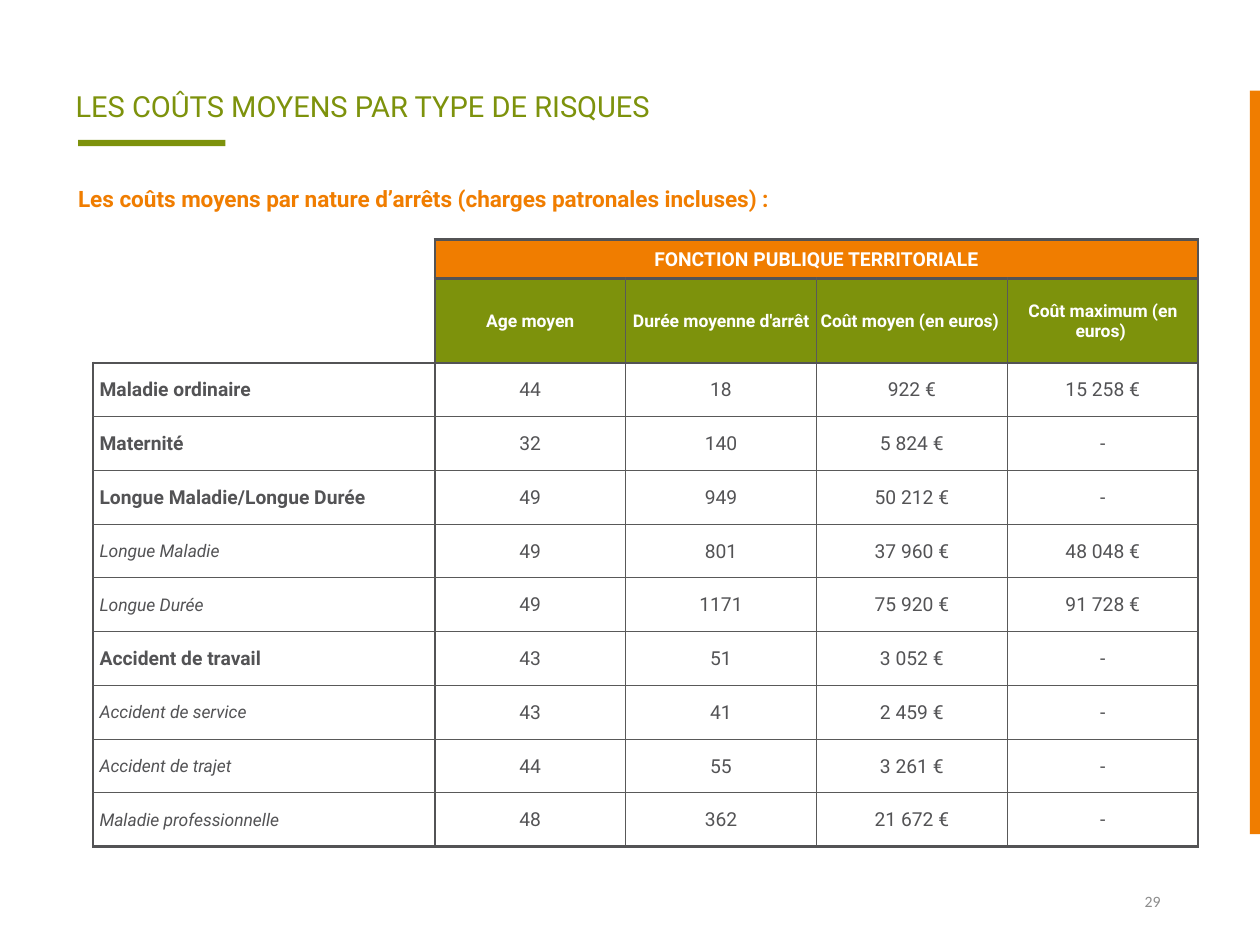
from lxml import etree
from pptx import Presentation
from pptx.dml.color import RGBColor
from pptx.enum.shapes import MSO_SHAPE
from pptx.enum.text import MSO_ANCHOR, PP_ALIGN
from pptx.oxml.ns import qn
from pptx.util import Inches, Pt

GREEN = RGBColor(0x7D, 0x92, 0x0C)
ORANGE = RGBColor(0xF0, 0x7D, 0x00)
DARK = RGBColor(0x53, 0x53, 0x55)
GRID = RGBColor(0x59, 0x59, 0x59)
GREY = RGBColor(0x8C, 0x8C, 0x8C)
WHITE = RGBColor(0xFF, 0xFF, 0xFF)
LEFT, CENTER, RIGHT = PP_ALIGN.LEFT, PP_ALIGN.CENTER, PP_ALIGN.RIGHT
MIDDLE, TOP = MSO_ANCHOR.MIDDLE, MSO_ANCHOR.TOP
RECTANGLE = MSO_SHAPE.RECTANGLE
TITLE_ONLY = 5
FONT = "Roboto"

BANNER = "FONCTION PUBLIQUE TERRITORIALE"
HEADINGS = ["Age moyen", "Durée moyenne d'arrêt", "Coût moyen (en euros) ",
            "Coût maximum (en euros) "]
# Label, whether it is a main category, then the four figures
RISKS = [
    ("Maladie ordinaire", True, "44", "18", "922 €", "15 258 €"),
    ("Maternité", True, "32", "140", "5 824 €", "-"),
    ("Longue Maladie/Longue Durée", True, "49", "949", "50 212 €", "-"),
    ("Longue Maladie", False, "49", "801", "37 960 €", "48 048 €"),
    ("Longue Durée", False, "49", "1171", "75 920 €", "91 728 €"),
    ("Accident de travail", True, "43", "51", "3 052 €", "-"),
    ("Accident de service", False, "43", "41", "2 459 €", "-"),
    ("Accident de trajet", False, "44", "55", "3 261 €", "-"),
    ("Maladie professionnelle", False, "48", "362", "21 672 €", "-"),
]
HEADER_ROWS = 2
ROW_COUNT = HEADER_ROWS + len(RISKS)
COLUMN_COUNT = 1 + len(HEADINGS)


def write(frame, text, size, color, align=LEFT, anchor=MIDDLE, bold=False,
          italic=False, font=FONT):
    frame.word_wrap = True
    frame.vertical_anchor = anchor
    para = frame.paragraphs[0]
    para.alignment = align
    span = para.add_run()
    span.text = text
    span.font.size, span.font.name = Pt(size), font
    span.font.bold, span.font.italic = bold, italic
    span.font.color.rgb = color


def place(shape, box):
    shape.left, shape.top, shape.width, shape.height = map(Inches, box)


def add_bar(page, box, color):
    bar = page.shapes.add_shape(RECTANGLE, *map(Inches, box))
    bar.shadow.inherit = False
    bar.fill.solid()
    bar.fill.fore_color.rgb = color
    bar.line.fill.background()


def add_heading(page, box):
    """Title, its green underline and the orange subtitle."""
    left, top, width, height = box
    title = page.shapes.title
    place(title, (left, top, width, height))
    write(title.text_frame, "LES COÛTS MOYENS PAR TYPE DE RISQUES", 16.6, GREEN)
    inner = left + 0.12
    add_bar(page, (inner, top + 0.46, 1.17, 0.05), GREEN)

    subtitle = page.shapes.add_textbox(*map(Inches, (inner, top + 0.82, 7.14, 0.26)))
    frame = subtitle.text_frame
    frame.margin_left = frame.margin_right = frame.margin_top = frame.margin_bottom = 0
    write(frame, "Les coûts moyens par nature d’arrêts (charges patronales incluses) :",
          12.9, ORANGE, anchor=TOP, bold=True)


def add_edge(cell, side, weight, color):
    """Draw one cell border; a weight of 0 hides it."""
    properties = cell._tc.get_or_add_tcPr()
    edge = etree.SubElement(properties, qn("a:ln" + side), w=str(Pt(weight)))
    if weight:
        fill = etree.SubElement(edge, qn("a:solidFill"))
        etree.SubElement(fill, qn("a:srgbClr"), val=str(color))
    else:
        etree.SubElement(edge, qn("a:noFill"))


def draw_edges(cell, row, column):
    """Thick lines frame the label column, the headers and the figures."""
    corner = row < HEADER_ROWS and column == 0
    edges = [
        ("L", column in (0, 1) or row == 0, corner),
        ("R", column in (0, COLUMN_COUNT - 1) or row == 0, False),
        ("T", row <= HEADER_ROWS, corner),
        ("B", row < HEADER_ROWS or row == ROW_COUNT - 1, corner and row == 0),
    ]
    for side, thick, hidden in edges:
        weight = 0 if hidden else 1.5 if thick else 0.5
        add_edge(cell, side, weight, DARK if thick else GRID)


def fill_cell(cell, row, column):
    """Write the text of a cell and colour it by its role."""
    fill, style = None, dict(size=11, color=DARK, align=CENTER)
    if row < HEADER_ROWS:
        names = [BANNER, "", "", ""] if row == 0 else HEADINGS
        text = "" if column == 0 else names[column - 1]
        style.update(size=11 - row, color=WHITE, bold=True)
        if column:
            fill = (ORANGE, GREEN)[row]
    else:
        label, main, *figures = RISKS[row - HEADER_ROWS]
        text = figures[column - 1] if column else label
        if column == 0:
            style.update(size=11 if main else 10, align=LEFT, bold=main, italic=not main)
    cell.margin_left = Inches(0.01 if column or row < HEADER_ROWS else 0.05)
    cell.margin_right = cell.margin_top = Inches(0.01)
    cell.margin_bottom = 0
    cell.vertical_anchor = MIDDLE
    write(cell.text_frame, text, **style)
    if fill is None:
        cell.fill.background()
    else:
        cell.fill.solid()
        cell.fill.fore_color.rgb = fill


def add_cost_table(page, box):
    width, height = box[2:]
    table = page.shapes.add_table(ROW_COUNT, COLUMN_COUNT, *map(Inches, box)).table
    table.first_row = table.horz_banding = False

    label_width, header_heights = 2.71, [0.3, 0.67]
    figure_width = (width - label_width) / len(HEADINGS)
    body_height = (height - sum(header_heights)) / len(RISKS)
    for column, item in enumerate(table.columns):
        item.width = Inches(figure_width if column else label_width)
    for row, item in enumerate(table.rows):
        item.height = Inches(header_heights[row] if row < HEADER_ROWS else body_height)

    for row in range(ROW_COUNT):
        for column in range(COLUMN_COUNT):
            cell = table.cell(row, column)
            draw_edges(cell, row, column)
            fill_cell(cell, row, column)
    table.cell(0, 1).merge(table.cell(0, COLUMN_COUNT - 1))


def add_page_number(page, box):
    number = page.shapes.add_textbox(*map(Inches, box))
    write(number.text_frame, "29", 9, GREY, align=RIGHT, font="Calibri")


def main():
    deck = Presentation()
    deck.slide_width, deck.slide_height = Inches(10), Inches(7.5)
    page = deck.slides.add_slide(deck.slide_layouts[TITLE_ONLY])
    add_page_number(page, (7.06, 6.95, 2.25, 0.4))
    add_heading(page, (0.5, 0.65, 7.97, 0.38))
    add_bar(page, (9.92, 0.72, 0.08, 5.9), ORANGE)
    add_cost_table(page, (0.74, 1.9, 8.77, 4.81))
    deck.save("out.pptx")


if __name__ == "__main__":
    main()
